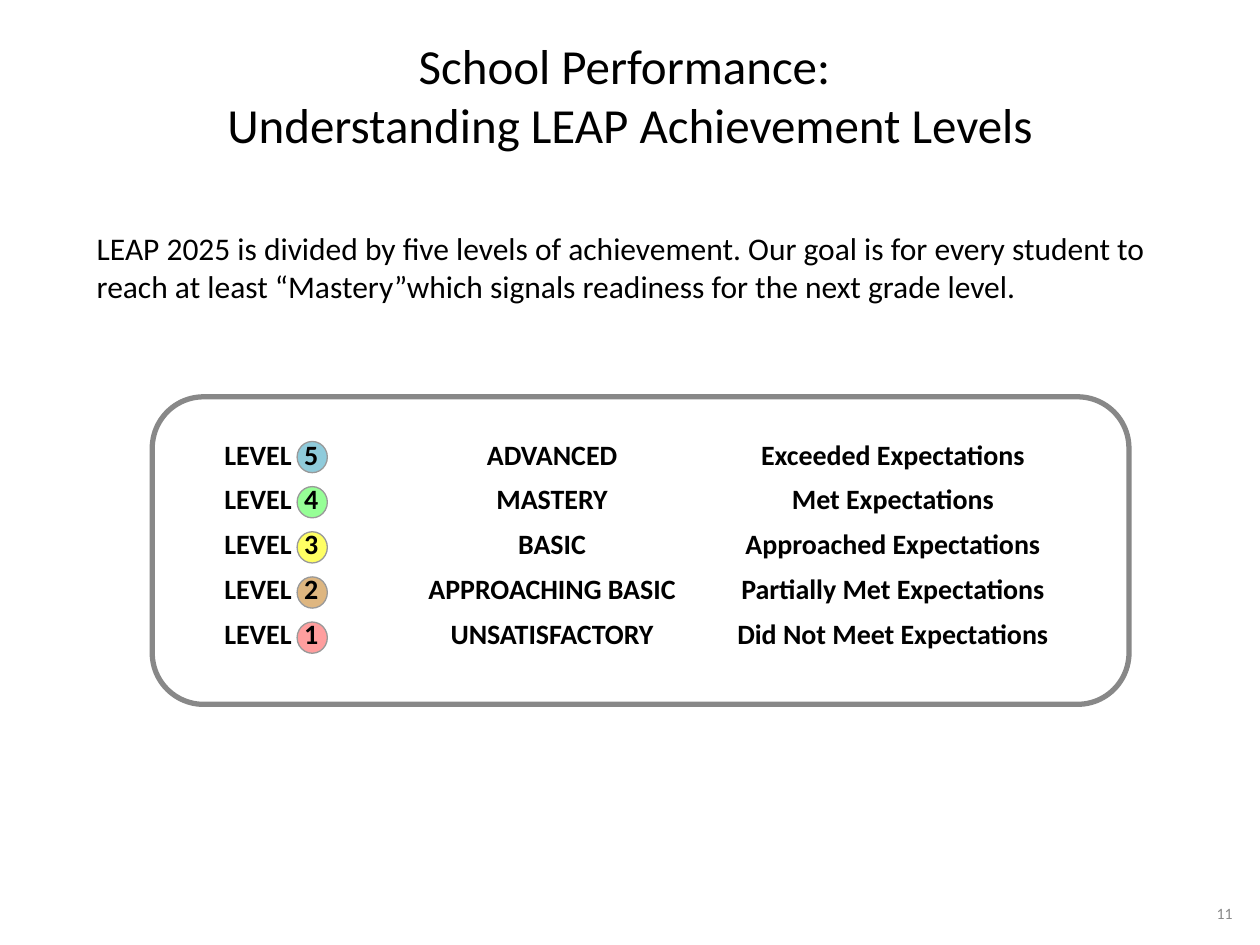
from lxml import etree
from pptx import Presentation
from pptx.dml.color import RGBColor
from pptx.enum.shapes import MSO_SHAPE as SHAPE
from pptx.enum.text import MSO_ANCHOR as ANCHOR, MSO_AUTO_SIZE as AUTO, PP_ALIGN as ALIGN
from pptx.oxml.ns import qn
from pptx.util import Cm, Pt

COLORS = {
    "text": "000000", "number": "8A8A8A", "panel": "FFFFFF",
    "border": "888888", "ring": "999999",
}
LEVELS = [
    ("LEVEL  5", "ADVANCED", "Exceeded Expectations", "4BACC6", 62),
    ("LEVEL  4", "MASTERY", "Met Expectations", "00FF00", 41),
    ("LEVEL  3", "BASIC", "Approached Expectations", "FFFF00", 61),
    ("LEVEL  2", "APPROACHING BASIC", "Partially Met Expectations", "BF6F02", 50),
    ("LEVEL  1", "UNSATISFACTORY", "Did Not Meet Expectations", "FF0000", 38),
]
NO_GRID_STYLE = "{2D5ABB26-0587-4C30-8999-92F81FD0307C}"
INSET = Cm(0.25)


def add_line(tf, i, text, size, align, color="text", bold=False):
    p = tf.paragraphs[0] if i == 0 else tf.add_paragraph()
    p.alignment = align
    p.space_before = Pt(0)
    r = p.add_run()
    r.text = text
    r.font.name = "Calibri"
    r.font.size = Pt(size)
    r.font.bold = bold
    r.font.color.rgb = RGBColor.from_string(COLORS[color])
    return p


def add_outlined(kind, box, fill, line, width):
    sp = s.shapes.add_shape(kind, *[Cm(v) for v in box])
    sp.shadow.inherit = False
    sp.fill.solid()
    sp.fill.fore_color.rgb = RGBColor.from_string(fill)
    sp.line.color.rgb = RGBColor.from_string(line)
    sp.line.width = Pt(width)
    return sp


prs = Presentation()
prs.slide_width, prs.slide_height = Cm(25.4), Cm(19.05)
s = prs.slides.add_slide(prs.slide_layouts[1])

title, body = s.shapes.title, s.placeholders[1]
title.left, title.top, title.width, title.height = Cm(0), Cm(-0.05), Cm(25.4), Cm(3.89)
body.left, body.top, body.width, body.height = Cm(1.7), Cm(4.37), Cm(22.43), Cm(2.79)
for sp, anchor in ((title, ANCHOR.MIDDLE), (body, ANCHOR.TOP)):
    tf = sp.text_frame
    tf.auto_size = AUTO.NONE
    tf.word_wrap = True
    tf.vertical_anchor = anchor
    tf.margin_left = tf.margin_right = tf.margin_top = tf.margin_bottom = INSET

for i, text in enumerate(["School Performance: ", "Understanding LEAP Achievement Levels"]):
    add_line(title.text_frame, i, text, 28, ALIGN.CENTER)

p = add_line(
    body.text_frame, 0,
    "LEAP 2025 is divided by five levels of achievement. Our goal is for every student to "
    "reach at least “Mastery”which signals readiness for the next grade level.",
    18, ALIGN.LEFT)
pPr = p._p.get_or_add_pPr()
pPr.set("marL", "0")
pPr.set("indent", "0")
etree.SubElement(pPr, qn("a:buNone"))

number = s.shapes.add_textbox(Cm(18.9), Cm(17.78), Cm(6.2), Cm(1.27))
number.text_frame.word_wrap = True
number.text_frame.vertical_anchor = ANCHOR.MIDDLE
add_line(number.text_frame, 0, "11", 9, ALIGN.RIGHT, "number")

panel = add_outlined(SHAPE.ROUNDED_RECTANGLE, (3.07, 8, 19.69, 6.2),
                     COLORS["panel"], COLORS["border"], 3)
panel.adjustments[0] = 0.167

for i, (*_, color, alpha) in enumerate(LEVELS):
    dot = add_outlined(SHAPE.OVAL, (5.99, 8.9 + 0.91 * i, 0.61, 0.63),
                       color, COLORS["ring"], 0.75)
    clr = dot._element.spPr.find(qn("a:solidFill")).find(qn("a:srgbClr"))
    etree.SubElement(clr, qn("a:alpha")).set("val", str(alpha * 1000))

table = s.shapes.add_table(1, 3, Cm(2.64), Cm(8.59), Cm(19.4), Cm(4.27)).table
table.first_row = table.horz_banding = False
table._tbl.tblPr.find(qn("a:tableStyleId")).text = NO_GRID_STYLE
for c, width in enumerate([5.66, 5.66, 8.08]):
    table.columns[c].width = Cm(width)
    cell = table.cell(0, c)
    cell.fill.background()
    cell.margin_left = cell.margin_right = cell.margin_top = cell.margin_bottom = INSET
    for i, level in enumerate(LEVELS):
        p = add_line(cell.text_frame, i, level[c], 16, ALIGN.CENTER, bold=True)
        p.space_before = Pt(6 if i else 0)
    p.space_after = Pt(6)

prs.save("out.pptx")
